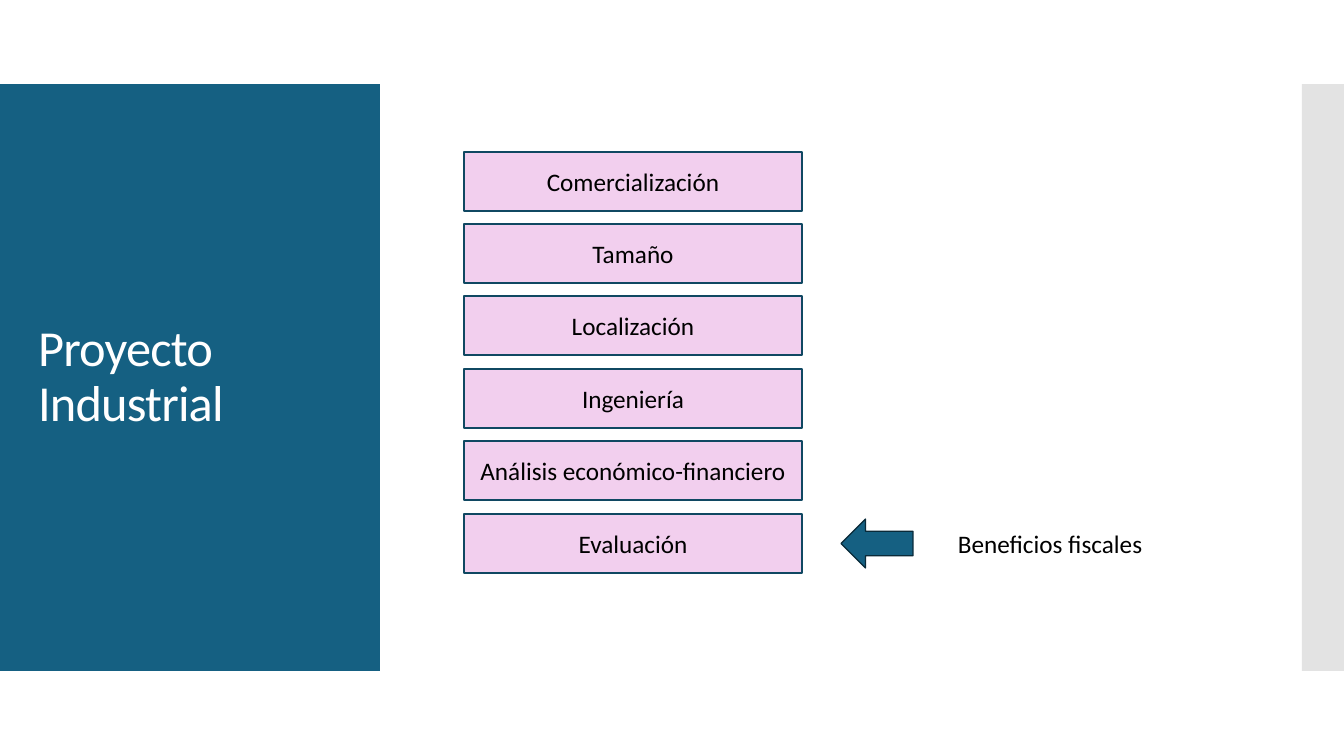
from dataclasses import dataclass

from lxml import etree
from pptx import Presentation
from pptx import util as u
from pptx.dml.color import RGBColor
from pptx.enum import shapes, text
from pptx.oxml.ns import qn


@dataclass(frozen=True)
class Theme:
    font: str = "Calibri"
    blue: str = "156082"
    edge: str = "104862"
    dark: str = "092A39"
    pink: str = "F2CFEE"
    gray: str = "C8C8C8"
    white: str = "FFFFFF"
    black: str = "000000"
    head: int = 36
    body: int = 18
    line: float = 0.85


THEME = Theme()
STAGES = (
    "Comercialización",
    "Tamaño",
    "Localización",
    "Ingeniería",
    "Análisis económico-financiero",
    "Evaluación",
)
TOP, SPAN = 152, 362


def px(n):
    return u.Emu(round(n * 914400 / 100.8))


def write(shape, words, size=THEME.body, color=THEME.black,
          align=text.PP_ALIGN.LEFT, anchor=text.MSO_ANCHOR.MIDDLE,
          lead=1.0, track=0):
    frame = shape.text_frame
    frame.word_wrap = True
    frame.auto_size = text.MSO_AUTO_SIZE.NONE
    frame.vertical_anchor = anchor
    para = frame.paragraphs[0]
    para.alignment = align
    para.line_spacing = lead
    run = para.add_run()
    run.text = words
    run.font.name = THEME.font
    run.font.size = u.Pt(size)
    run.font.color.rgb = RGBColor.from_string(color)
    if track:
        run.font._element.set("spc", str(track))


def block(slide, box, fill, line=None, alpha=None,
          kind=shapes.MSO_SHAPE.RECTANGLE):
    shape = slide.shapes.add_shape(kind, *map(px, box))
    shape.shadow.inherit = False
    shape.fill.solid()
    shape.fill.fore_color.rgb = RGBColor.from_string(fill)
    if alpha:
        color = shape._element.spPr.find(".//" + qn("a:srgbClr"))
        etree.SubElement(color, qn("a:alpha")).set("val", str(alpha * 1000))
    if line:
        shape.line.color.rgb = RGBColor.from_string(line)
        shape.line.width = u.Pt(THEME.line)
    else:
        shape.line.fill.background()
    return shape


def title(slide, words, box):
    head = slide.shapes.title
    head.left, head.top, head.width, head.height = map(px, box)
    slide.shapes._spTree.append(head._element)
    write(head, words, size=THEME.head, color=THEME.white, lead=0.9, track=-60)


def label(slide, words, box):
    note = slide.shapes.add_textbox(*map(px, box))
    write(note, words, anchor=text.MSO_ANCHOR.TOP)


def main():
    deck = Presentation()
    deck.slide_width, deck.slide_height = px(1344), px(756)
    slide = deck.slides.add_slide(deck.slide_layouts[5])

    block(slide, (0, 84, 380, 587), THEME.blue)
    block(slide, (1302, 84, 42, 587), THEME.gray, alpha=50)
    title(slide, "Proyecto Industrial", (28, 124, 325, 507))

    for i, stage in enumerate(STAGES):
        top = TOP + i * SPAN // (len(STAGES) - 1)
        step = block(slide, (464, top, 338, 59), THEME.pink, line=THEME.edge)
        write(step, stage, align=text.PP_ALIGN.CENTER)

    block(slide, (841, 519, 72, 49), THEME.blue, line=THEME.dark,
          kind=shapes.MSO_SHAPE.LEFT_ARROW)
    label(slide, "Beneficios fiscales", (948, 523, 238, 40))
    deck.save("out.pptx")


if __name__ == "__main__":
    main()
